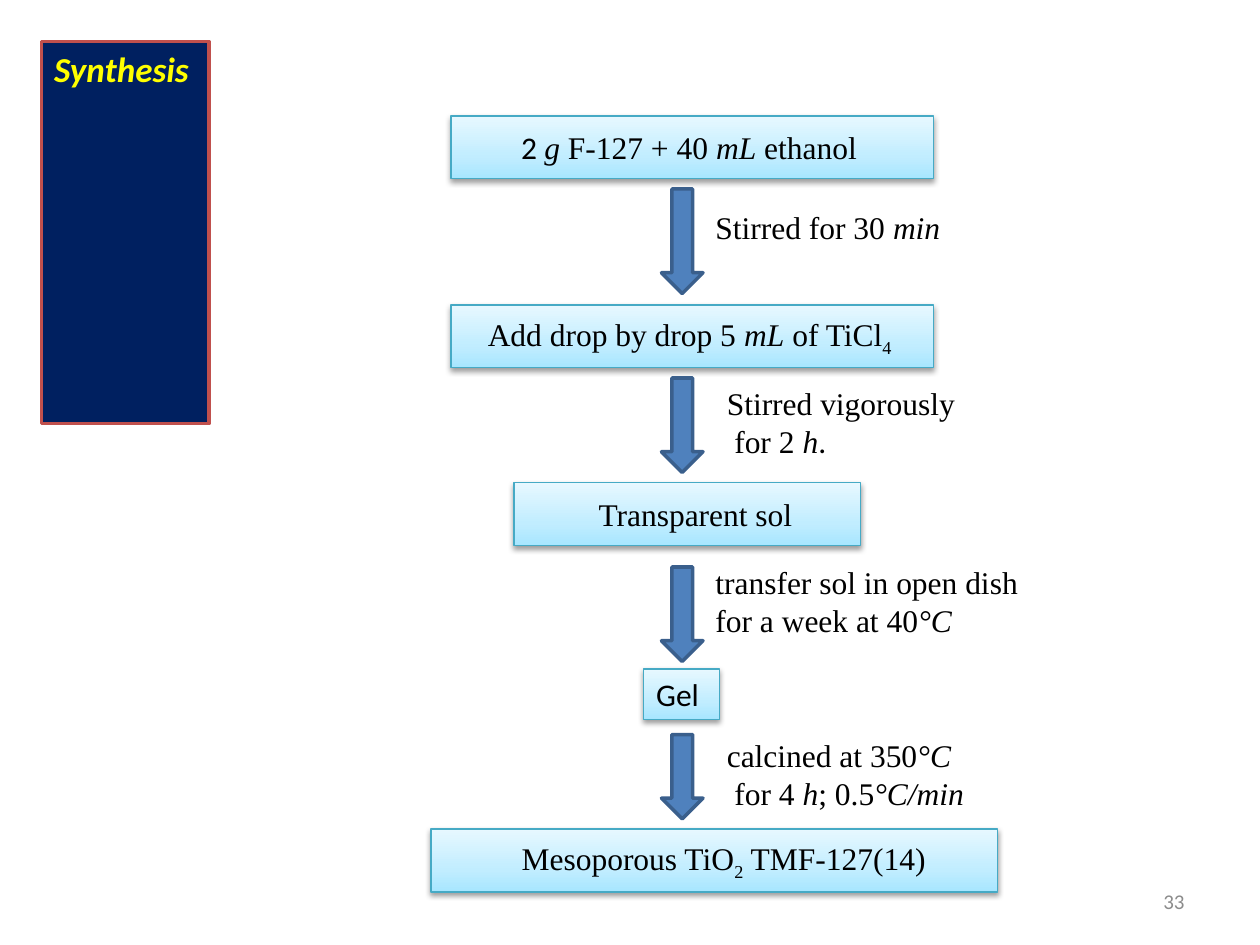
from lxml.etree import SubElement
from pptx import Presentation
from pptx.dml.color import RGBColor
from pptx.enum.shapes import MSO_SHAPE
from pptx.enum.text import MSO_ANCHOR, MSO_AUTO_SIZE, PP_ALIGN
from pptx.oxml import parse_xml
from pptx.oxml.ns import nsdecls, qn
from pptx.util import Inches, Pt

THEME = {
    "sans": "Calibri", "serif": "Times New Roman",
    "title_size": 20, "body_size": 18, "number_size": 12,
    "text": "000000", "number": "8C8C8C",
    "title_text": "FFFF00", "title_fill": "002060", "title_line": "C0504D",
    "arrow_fill": "4F81BD", "arrow_line": "3A5F8C", "step_line": "46AAC5",
    "step_gradient": [(0, "A7E6FF"), (35, "C1EDFF"), (100, "E7F8FF")],
}

TITLE = "Synthesis"
PAGE_NUMBER = "33"
CENTER, LEFT, RIGHT = PP_ALIGN.CENTER, PP_ALIGN.LEFT, PP_ALIGN.RIGHT

STEPS = [
    ((3.58, 0.92, 3.83, 0.5), CENTER, 0.1, 0.15,
     [("2 ", "sans"), ("g", "italic"), (" F-127 + 40 ", ""), ("mL", "italic"), (" ethanol", "")]),
    ((3.58, 2.42, 3.83, 0.5), CENTER, 0.1, 0.14,
     [("Add drop by drop 5 ", ""), ("mL", "italic"), (" of TiCl", ""), ("4", "subscript")]),
    ((4.08, 3.83, 2.75, 0.5), LEFT, 0.67, 0.1, [("Transparent sol", "")]),
    ((5.11, 5.31, 0.6, 0.4), LEFT, 0.1, 0.1, [("Gel", "sans")]),
    ((3.42, 6.58, 4.5, 0.5), LEFT, 0.72, 0.1,
     [("Mesoporous TiO", ""), ("2", "subscript"), (" TMF-127(14)", "")]),
]

ARROW_LEFT, ARROW_WIDTH = 5.25, 0.33
ARROWS = [(1.5, 0.83), (3, 0.75), (4.5, 0.75), (5.83, 0.67)]

CONDITIONS = [
    ((5.58, 1.6, 2.07, 0.4), 0, [[("Stirred for 30 ", ""), ("min", "italic")]]),
    ((5.67, 3, 2.03, 0.71), 0.06,
     [[("Stirred vigorously", "")], [("for 2 ", ""), ("h", "italic"), (".", "sans")]]),
    ((5.58, 4.42, 2.66, 1.01), 0,
     [[("transfer sol in open dish", "")], [("for a week at 40", ""), ("°C", "italic")]]),
    ((5.67, 5.79, 2.12, 0.71), 0.06,
     [[("calcined at 350", ""), ("°C", "italic")],
      [("for 4 ", ""), ("h", "italic"), ("; 0.5", ""), ("°C/min", "italic")]]),
]


def color(name):
    return RGBColor.from_string(THEME[name])


def add_run(paragraph, text, style="", size="body_size", ink="text"):
    run = paragraph.add_run()
    run.text = text
    run.font.name = THEME["sans" if style == "sans" else "serif"]
    run.font.size = Pt(THEME[size])
    run.font.color.rgb = color(ink)
    run.font.italic = style == "italic"
    if style == "subscript":
        run.font._element.set("baseline", "-25000")
    return run


def paint(shape, fill, line, width):
    shape.fill.solid()
    shape.fill.fore_color.rgb = color(fill)
    shape.line.color.rgb = color(line)
    shape.line.width = Pt(width)


def apply_step_style(shape):
    shape.line.color.rgb = color("step_line")
    shape.line.width = Pt(0.75)
    shape.fill.gradient()
    shape.fill.gradient_angle = 90
    properties = shape._element.spPr
    stops = properties.find(qn("a:gradFill")).find(qn("a:gsLst"))
    for stop in list(stops):
        stops.remove(stop)
    for position, value in THEME["step_gradient"]:
        stop = SubElement(stops, qn("a:gs"), pos=str(position * 1000))
        SubElement(stop, qn("a:srgbClr"), val=value)
    shape.shadow.inherit = False
    properties.find(qn("a:effectLst")).append(parse_xml(
        f'<a:outerShdw {nsdecls("a")} blurRad="40000" dist="20000" dir="5400000" rotWithShape="0">'
        '<a:srgbClr val="000000"><a:alpha val="38000"/></a:srgbClr></a:outerShdw>'))


def add_step(slide, box, alignment, left_inset, right_inset, runs):
    shape = slide.shapes.add_shape(MSO_SHAPE.RECTANGLE, *map(Inches, box))
    apply_step_style(shape)
    frame = shape.text_frame
    frame.word_wrap = True
    frame.vertical_anchor = MSO_ANCHOR.MIDDLE
    frame.margin_left, frame.margin_right = Inches(left_inset), Inches(right_inset)
    paragraph = frame.paragraphs[0]
    paragraph.alignment = alignment
    for text, style in runs:
        add_run(paragraph, text, style)


def add_arrow(slide, top, height):
    arrow = slide.shapes.add_shape(
        MSO_SHAPE.DOWN_ARROW, *map(Inches, (ARROW_LEFT, top, ARROW_WIDTH, height)))
    paint(arrow, "arrow_fill", "arrow_line", 2)
    arrow.shadow.inherit = False


def add_condition(slide, box, second_indent, lines):
    frame = slide.shapes.add_textbox(*map(Inches, box)).text_frame
    frame.word_wrap = False
    frame.auto_size = MSO_AUTO_SIZE.SHAPE_TO_FIT_TEXT
    for index, runs in enumerate(lines):
        paragraph = frame.add_paragraph() if index else frame.paragraphs[0]
        if index and second_indent:
            paragraph._p.get_or_add_pPr().set("marL", str(Inches(second_indent)))
        for text, style in runs:
            add_run(paragraph, text, style)


def format_title(title):
    title.left, title.top, title.width, title.height = map(Inches, (0.33, 0.33, 1.33, 0.44))
    paint(title, "title_fill", "title_line", 2)
    frame = title.text_frame
    frame.word_wrap = True
    frame.auto_size = MSO_AUTO_SIZE.SHAPE_TO_FIT_TEXT
    frame.vertical_anchor = MSO_ANCHOR.TOP
    paragraph = frame.paragraphs[0]
    paragraph.alignment = LEFT
    run = add_run(paragraph, TITLE, "sans", "title_size", "title_text")
    run.font.bold = run.font.italic = True


def add_page_number(slide):
    frame = slide.shapes.add_textbox(*map(Inches, (7.17, 6.95, 2.33, 0.4))).text_frame
    frame.word_wrap = True
    frame.vertical_anchor = MSO_ANCHOR.MIDDLE
    paragraph = frame.paragraphs[0]
    paragraph.alignment = RIGHT
    add_run(paragraph, PAGE_NUMBER, "sans", "number_size", "number")


def main():
    presentation = Presentation()
    presentation.slide_width, presentation.slide_height = Inches(10), Inches(7.5)
    slide = presentation.slides.add_slide(presentation.slide_layouts[5])
    format_title(slide.shapes.title)
    for step in STEPS:
        add_step(slide, *step)
    for arrow in ARROWS:
        add_arrow(slide, *arrow)
    for condition in CONDITIONS:
        add_condition(slide, *condition)
    add_page_number(slide)
    presentation.save("out.pptx")


if __name__ == "__main__":
    main()
